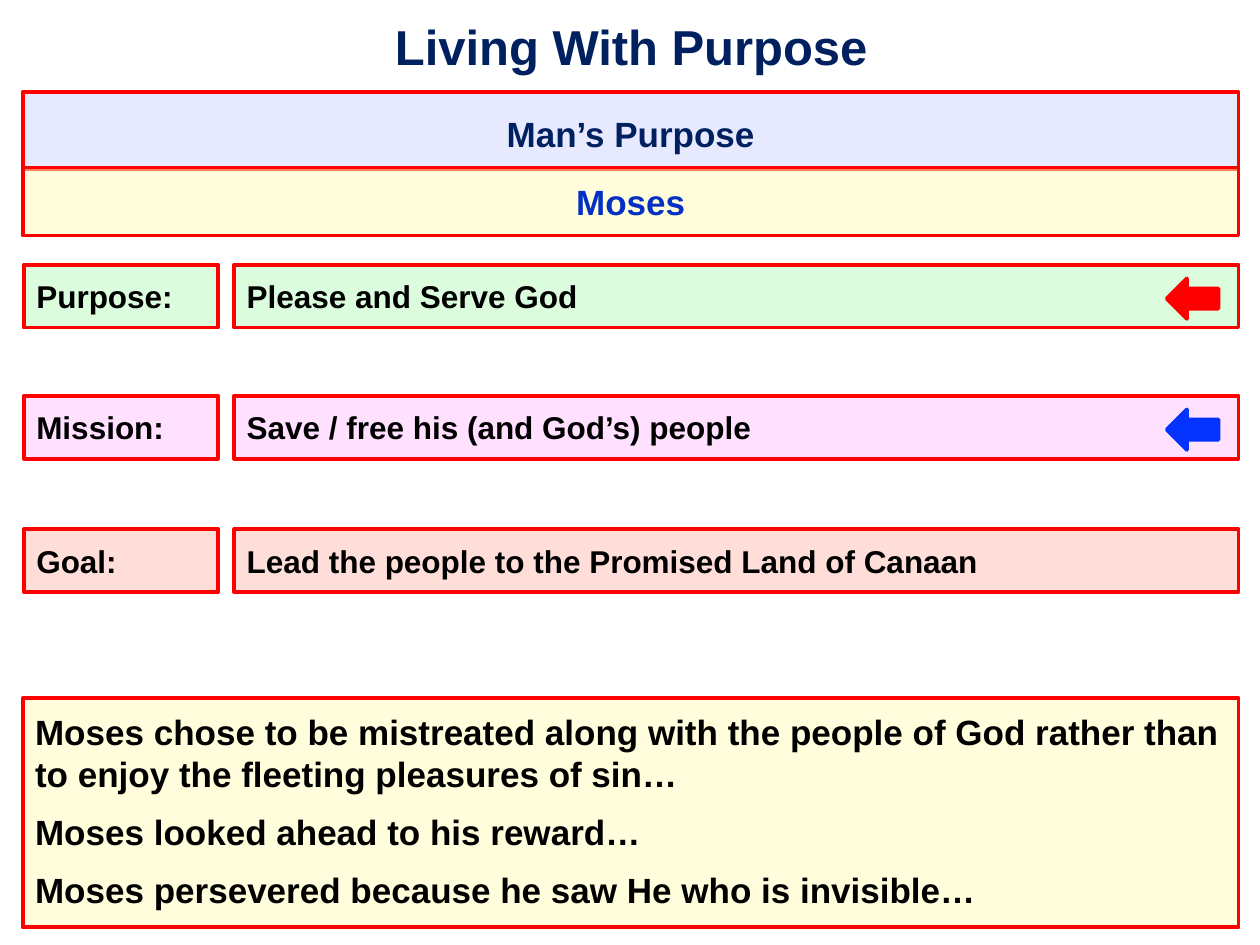
from lxml.etree import SubElement
from pptx import Presentation
from pptx.dml.color import RGBColor
from pptx.enum.shapes import MSO_SHAPE
from pptx.enum.text import MSO_ANCHOR, MSO_AUTO_SIZE, PP_ALIGN
from pptx.oxml.ns import qn
from pptx.util import Inches, Pt

COLORS = {
    "navy": "002060", "blue": "0530C4", "black": "000000",
    "red": "FF0000", "arrow_blue": "0432FF", "lavender": "D0D6FF",
    "cream": "FFFDB8", "green": "73FB79", "pink": "FF85FF", "coral": "FF2600",
}
LEFT, WIDTH = 0.18, 9.65


def color(name):
    return RGBColor.from_string(COLORS[name])


def write_text(frame, *lines, size=18, ink="black", align=PP_ALIGN.LEFT,
               spacing=None, gap=0, insets=(0.1, 0.1, 0.1, 0.1),
               anchor=MSO_ANCHOR.TOP, fit=MSO_AUTO_SIZE.SHAPE_TO_FIT_TEXT):
    """Fill a text frame with one paragraph per line; gap is in points."""
    frame.word_wrap = True
    frame.auto_size = fit
    frame.vertical_anchor = anchor
    (frame.margin_left, frame.margin_top,
     frame.margin_right, frame.margin_bottom) = map(Inches, insets)
    for index, line in enumerate(lines):
        paragraph = frame.add_paragraph() if index else frame.paragraphs[0]
        paragraph.alignment = align
        paragraph.line_spacing = spacing
        paragraph.space_before = Pt(gap if index else 0)
        run = paragraph.add_run()
        run.text = line
        run.font.name = "Arial"
        run.font.size = Pt(size)
        run.font.bold = True
        run.font.color.rgb = color(ink)


class PurposeSlide:
    border = "red"
    border_width = Pt(2.25)

    def __init__(self, presentation):
        self.slide = presentation.slides.add_slide(presentation.slide_layouts[5])

    def title(self, text, box):
        title = self.slide.shapes.title
        title.left, title.top, title.width, title.height = map(Inches, box)
        write_text(title.text_frame, text, size=28, ink="navy",
                   align=PP_ALIGN.CENTER, insets=(0.1, 0.06, 0.14, 0.06),
                   anchor=MSO_ANCHOR.MIDDLE, fit=MSO_AUTO_SIZE.NONE)

    def shape(self, kind, box, fill, line):
        shape = self.slide.shapes.add_shape(kind, *map(Inches, box))
        shape.shadow.inherit = False
        shape.fill.solid()
        shape.fill.fore_color.rgb = color(fill)
        shape.line.color.rgb = color(line)
        shape.line.width = self.border_width
        return shape

    def panel(self, box, fill, opacity, *lines, **text_format):
        panel = self.shape(MSO_SHAPE.RECTANGLE, box, fill, self.border)
        fill_color = panel.fill._xPr.find(qn("a:solidFill"))[0]
        SubElement(fill_color, qn("a:alpha"), val=str(opacity * 1000))
        write_text(panel.text_frame, *lines, **text_format)

    def arrow(self, top, fill):
        self.shape(MSO_SHAPE.LEFT_ARROW, (9.26, top, 0.41, 0.32), fill, fill)


def main():
    presentation = Presentation()
    presentation.slide_width, presentation.slide_height = Inches(10), Inches(7.5)
    purpose = PurposeSlide(presentation)

    # Title and heading bands
    purpose.title("Living With Purpose", (0.14, 0.02, 9.78, 0.69))
    purpose.panel((LEFT, 0.73, WIDTH, 0.61), "lavender", 50, "Man’s Purpose",
                  size=20, ink="navy", align=PP_ALIGN.CENTER, spacing=1.2)
    purpose.panel((LEFT, 1.33, WIDTH, 0.54), "cream", 50, "Moses",
                  size=20, ink="blue", align=PP_ALIGN.CENTER)

    # Label and statement rows, with an arrow on the first two
    rows = [
        (2.1, "green", 25, "Purpose:", "Please and Serve God", "red"),
        (3.14, "pink", 25, "Mission:", "Save / free his (and God’s) people",
         "arrow_blue"),
        (4.2, "coral", 15, "Goal:",
         "Lead the people to the Promised Land of Canaan", None),
    ]
    for top, fill, opacity, label, statement, arrow_color in rows:
        purpose.panel((0.19, top, 1.54, 0.5), fill, opacity, label)
        purpose.panel((1.86, top, 7.97, 0.5), fill, opacity, statement)
        if arrow_color:
            purpose.arrow(top + 0.11, arrow_color)

    # Closing account of Moses
    purpose.panel(
        (LEFT, 5.54, WIDTH, 1.82), "cream", 50,
        "Moses chose to be mistreated along with the people of God "
        "rather than to enjoy the fleeting pleasures of sin…",
        "Moses looked ahead to his reward…",
        "Moses persevered because he saw He who is invisible…",
        size=20, gap=9.2)

    presentation.save("out.pptx")


if __name__ == "__main__":
    main()
